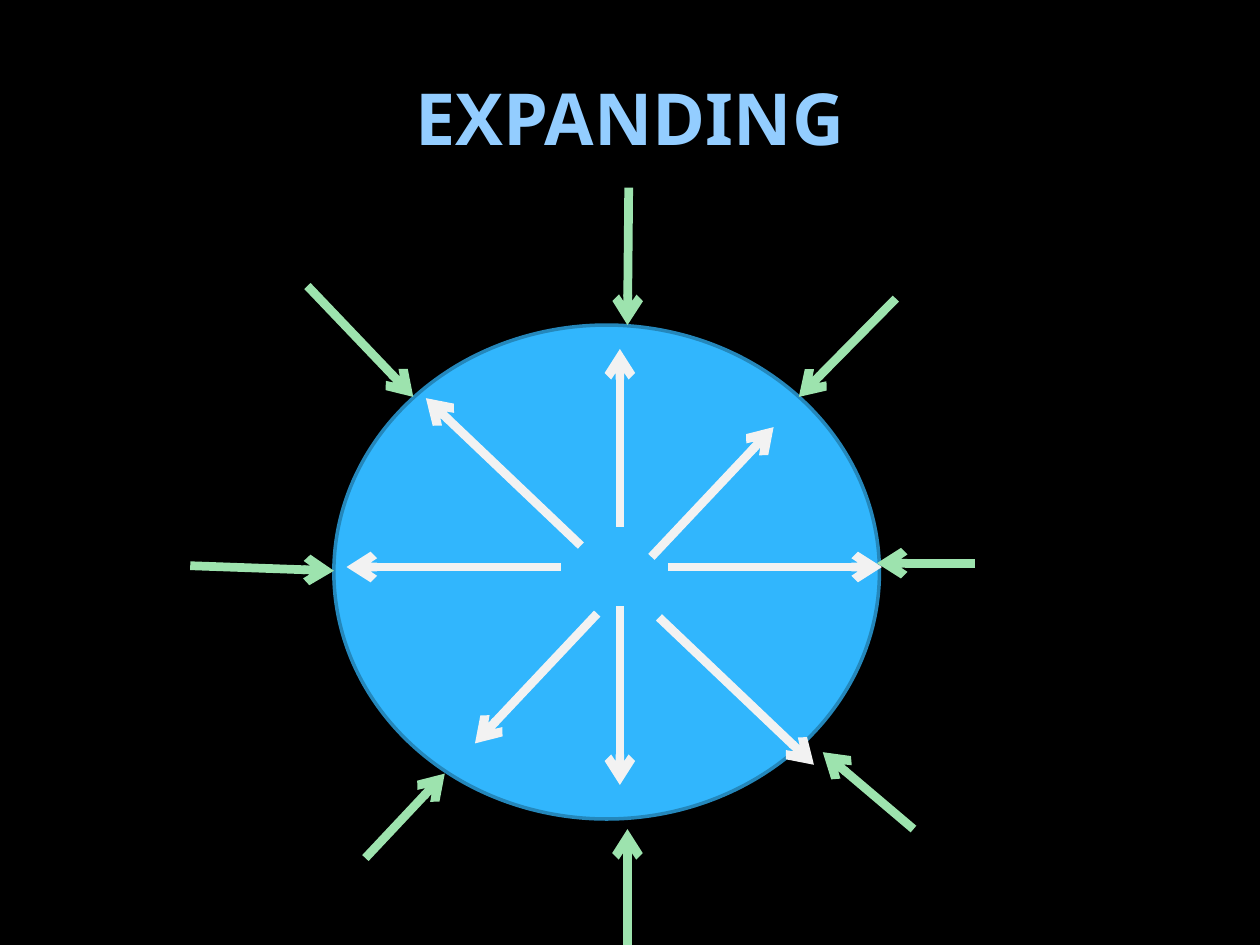
from lxml.etree import SubElement
from pptx import Presentation
from pptx.dml.color import RGBColor
from pptx.enum.shapes import MSO_CONNECTOR, MSO_SHAPE
from pptx.enum.text import MSO_ANCHOR, PP_ALIGN
from pptx.oxml.ns import qn
from pptx.util import Inches, Pt

TITLE = "EXPANDING"
FONT = "Noto Sans"
HUES = {
    "back": "000000",
    "title": "93CDFF",
    "ball": "31B6FD",
    "rim": "2487BB",
    "push": "F2F2F2",
    "press": "9DE3AE",
}
WIDE, HIGH = 10, 7.5

# Each arrow runs from tail to tip: x, y, x, y in inches
ARROWS = {
    "push": [
        (4.92, 4.18, 4.92, 2.77),
        (4.45, 4.5, 2.75, 4.5),
        (5.3, 4.5, 7, 4.5),
        (4.92, 4.81, 4.92, 6.23),
        (5.17, 4.42, 6.14, 3.39),
        (4.61, 4.33, 3.38, 3.16),
        (5.23, 4.9, 6.46, 6.07),
        (4.74, 4.87, 3.77, 5.9),
    ],
    "press": [
        (1.51, 4.49, 2.65, 4.53),
        (7.74, 4.47, 6.96, 4.47),
        (4.99, 1.49, 4.98, 2.58),
        (4.98, HIGH, 4.98, 6.58),
        (2.44, 2.27, 3.28, 3.15),
        (7.25, 6.58, 6.53, 5.97),
        (7.11, 2.37, 6.34, 3.15),
        (2.9, 6.81, 3.53, 6.14),
    ],
}


def hue(name):
    return RGBColor.from_string(HUES[name])


def add_title(slide):
    edge = WIDE * 0.05
    box = slide.shapes.add_textbox(
        *map(Inches, (edge, HIGH * 0.04, WIDE - 2 * edge, 1.25)))
    frame = box.text_frame
    frame.word_wrap = True
    frame.vertical_anchor = MSO_ANCHOR.MIDDLE
    frame.text = TITLE
    line = frame.paragraphs[0]
    line.alignment = PP_ALIGN.CENTER
    font = line.runs[0].font
    font.name, font.size, font.bold = FONT, Pt(41), True
    font.color.rgb = hue("title")


def add_ball(slide):
    ball = slide.shapes.add_shape(
        MSO_SHAPE.OVAL, *map(Inches, (2.65, 2.58, 4.33, 3.92)))
    ball.shadow.inherit = False
    ball.fill.solid()
    ball.fill.fore_color.rgb = hue("ball")
    ball.line.color.rgb = hue("rim")
    ball.line.width = Pt(2)


def add_arrow(shapes, ends, name):
    arrow = shapes.add_connector(MSO_CONNECTOR.STRAIGHT, *map(Inches, ends))
    arrow.line.color.rgb = hue(name)
    arrow.line.width = Pt(5)
    SubElement(arrow.line._get_or_add_ln(), qn("a:tailEnd"), type="arrow")
    SubElement(arrow._element.spPr, qn("a:effectLst"))


def main():
    deck = Presentation()
    deck.slide_width, deck.slide_height = Inches(WIDE), Inches(HIGH)
    slide = deck.slides.add_slide(deck.slide_layouts[6])
    slide.background.fill.solid()
    slide.background.fill.fore_color.rgb = hue("back")
    add_title(slide)
    add_ball(slide)
    hosts = {"push": slide.shapes.add_group_shape().shapes,
             "press": slide.shapes}
    for name, rows in ARROWS.items():
        for ends in rows:
            add_arrow(hosts[name], ends, name)
    deck.save("out.pptx")


if __name__ == "__main__":
    main()
